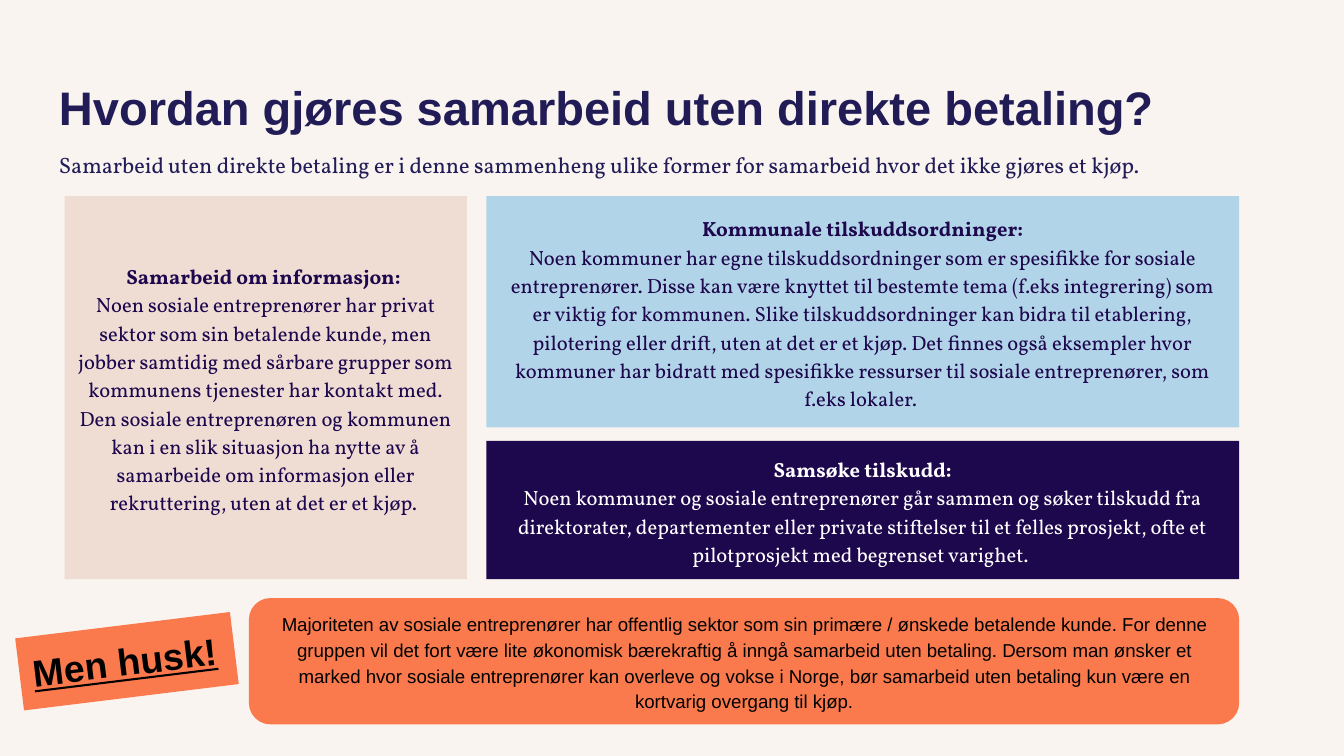
from pptx import Presentation
from pptx.dml.color import RGBColor
from pptx.enum.shapes import MSO_SHAPE
from pptx.enum.text import MSO_ANCHOR, PP_ALIGN
from pptx.util import Inches, Pt

RECTANGLE = MSO_SHAPE.RECTANGLE
ROUNDED = MSO_SHAPE.ROUNDED_RECTANGLE
TOP, MIDDLE = MSO_ANCHOR.TOP, MSO_ANCHOR.MIDDLE
LEFT, CENTER = PP_ALIGN.LEFT, PP_ALIGN.CENTER

SLIDE_WIDTH = Inches(10)
SLIDE_HEIGHT = SLIDE_WIDTH * 9 // 16
SANS, SERIF = "Arial", "Vollkorn"

COLORS = {
    "background": "F9F4F0",
    "heading": "211C56",
    "sand": "EFDDD4",
    "sky": "B2D4E8",
    "indigo": "1D074D",
    "orange": "FA7A4D",
    "white": "FFFFFF",
    "black": "000000",
}

COLUMNS = {"information": (4.82, 34.74), "grants": (36.2, 92.2), "reminder": (18.52, 92.2)}
ROWS = {
    "all": (25.96, 76.62),
    "upper": (25.96, 56.53),
    "lower": (58.31, 76.62),
    "reminder": (79.11, 95.82),
}

CARDS = [
    ("information", "all", "sand", "indigo", "Samarbeid om informasjon: ",
     "Noen sosiale entreprenører har privat sektor som sin betalende kunde, men jobber "
     "samtidig med sårbare grupper som kommunens tjenester har kontakt med. Den sosiale "
     "entreprenøren og kommunen kan i en slik situasjon ha nytte av å samarbeide om "
     "informasjon eller rekruttering, uten at det er et kjøp. "),
    ("grants", "upper", "sky", "indigo", "Kommunale tilskuddsordninger:",
     "Noen kommuner har egne tilskuddsordninger som er spesifikke for sosiale "
     "entreprenører. Disse kan være knyttet til bestemte tema (f.eks integrering) som er "
     "viktig for kommunen. Slike tilskuddsordninger kan bidra til etablering, pilotering "
     "eller drift, uten at det er et kjøp. Det finnes også eksempler hvor kommuner har "
     "bidratt med spesifikke ressurser til sosiale entreprenører, som f.eks lokaler. "),
    ("grants", "lower", "indigo", "white", "Samsøke tilskudd:",
     "Noen kommuner og sosiale entreprenører går sammen og søker tilskudd fra "
     "direktorater, departementer eller private stiftelser til et felles prosjekt, ofte "
     "et pilotprosjekt med begrenset varighet. "),
]

REMINDER = (
    "Majoriteten av sosiale entreprenører har offentlig sektor som sin primære / ønskede "
    "betalende kunde. For denne gruppen vil det fort være lite økonomisk bærekraftig å "
    "inngå samarbeid uten betaling. Dersom man ønsker et marked hvor sosiale entreprenører "
    "kan overleve og vokse i Norge, bør samarbeid uten betaling kun være en kortvarig "
    "overgang til kjøp."
)


def color(name):
    return RGBColor.from_string(COLORS[name])


def place(left, top, right, bottom):
    return (
        int(SLIDE_WIDTH * left / 100),
        int(SLIDE_HEIGHT * top / 100),
        int(SLIDE_WIDTH * (right - left) / 100),
        int(SLIDE_HEIGHT * (bottom - top) / 100),
    )


def cell(column, row):
    (left, right), (top, bottom) = COLUMNS[column], ROWS[row]
    return place(left, top, right, bottom)


def prepare_frame(shape, anchor):
    frame = shape.text_frame
    frame.word_wrap = True
    frame.vertical_anchor = anchor
    frame.margin_left = frame.margin_right = Inches(0.1)
    frame.margin_top = frame.margin_bottom = Inches(0.1)
    return frame


def style_paragraph(paragraph, text, font, size, ink, bold=False, align=LEFT, spacing=1.0):
    paragraph.text = text
    paragraph.alignment = align
    paragraph.line_spacing = spacing
    paragraph.font.name = font
    paragraph.font.size = Pt(size)
    paragraph.font.bold = bold
    paragraph.font.color.rgb = color(ink)


def add_text(slide, box, text, font, size, bold=False, spacing=1.0):
    frame = prepare_frame(slide.shapes.add_textbox(*box), TOP)
    style_paragraph(frame.paragraphs[0], text, font, size, "heading", bold, spacing=spacing)


def add_panel(slide, kind, box, fill):
    shape = slide.shapes.add_shape(kind, *box)
    shape.shadow.inherit = False
    shape.fill.solid()
    shape.fill.fore_color.rgb = color(fill)
    shape.line.fill.background()
    return shape


def add_card(slide, column, row, fill, ink, heading, body):
    frame = prepare_frame(add_panel(slide, RECTANGLE, cell(column, row), fill), MIDDLE)
    style_paragraph(frame.paragraphs[0], heading, SERIF, 11, ink, True, CENTER, 1.15)
    style_paragraph(frame.add_paragraph(), body, SERIF, 11, ink, False, CENTER, 1.15)


def add_reminder(slide):
    panel = add_panel(slide, ROUNDED, cell("reminder", "reminder"), "orange")
    panel.adjustments[0] = 0.17
    paragraph = prepare_frame(panel, MIDDLE).paragraphs[0]
    style_paragraph(paragraph, REMINDER, SANS, 10, "black", False, CENTER, 1.15)


def add_tag(slide):
    tag = add_panel(slide, RECTANGLE, place(1.4, 82.67, 17.5, 92.27), "orange")
    tag.rotation = 353
    paragraph = prepare_frame(tag, TOP).paragraphs[0]
    style_paragraph(paragraph, "Men husk!", SANS, 20, "black", True)
    paragraph.font.underline = True


def main():
    presentation = Presentation()
    presentation.slide_width = SLIDE_WIDTH
    presentation.slide_height = SLIDE_HEIGHT
    slide = presentation.slides.add_slide(presentation.slide_layouts[6])
    slide.background.fill.solid()
    slide.background.fill.fore_color.rgb = color("background")

    add_text(slide, place(3.41, 8.65, 96.59, 19.85),
             "Hvordan gjøres samarbeid uten direkte betaling?", SANS, 25.2, bold=True)
    add_text(slide, place(3.41, 18.13, 96.59, 26.84),
             "Samarbeid uten direkte betaling er i denne sammenheng ulike former for "
             "samarbeid hvor det ikke gjøres et kjøp.", SERIF, 11.9, spacing=1.05)
    add_reminder(slide)
    for card in CARDS:
        add_card(slide, *card)
    add_tag(slide)
    presentation.save("out.pptx")


if __name__ == "__main__":
    main()
